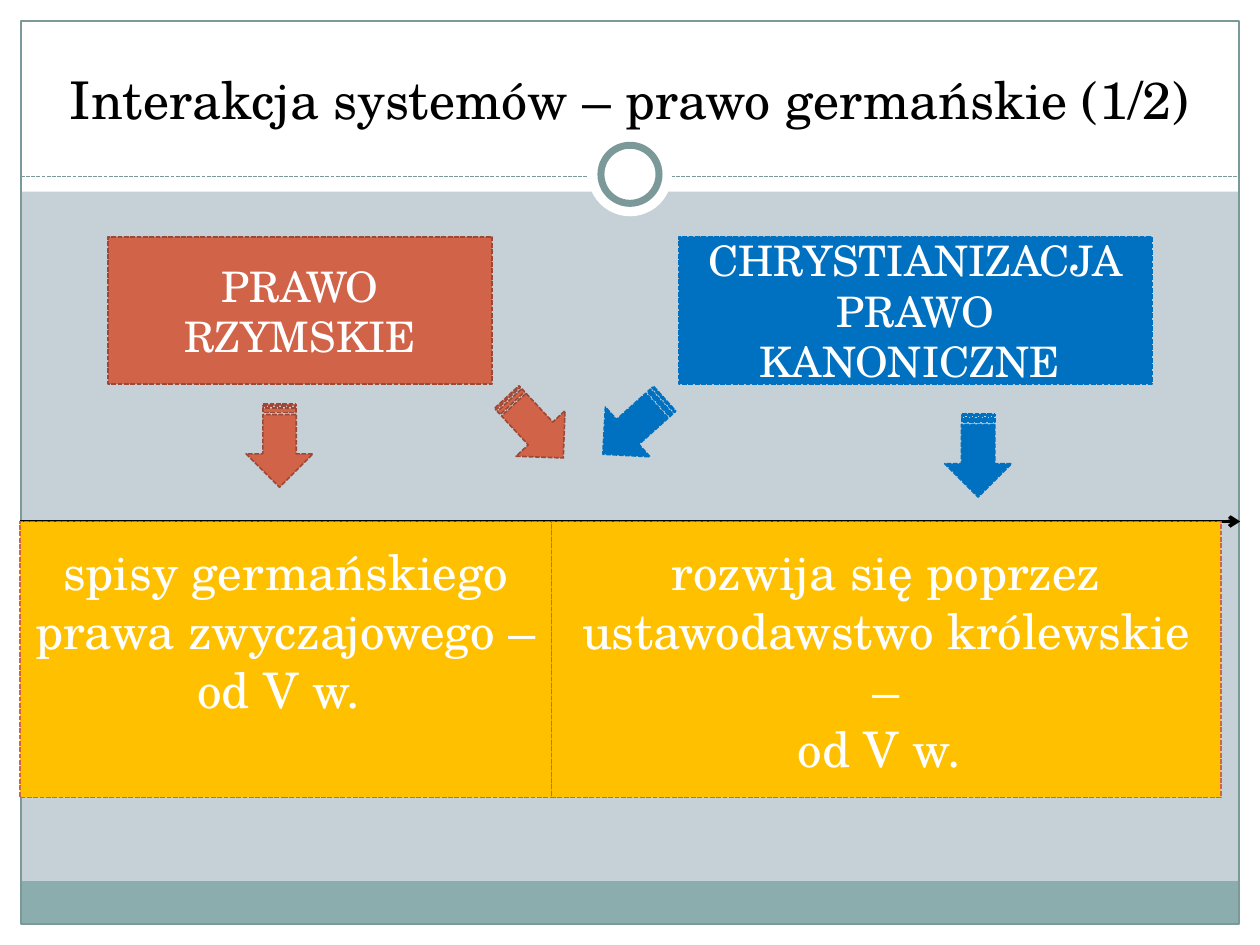
from dataclasses import dataclass
from typing import Optional

from lxml.etree import SubElement
from pptx import Presentation
from pptx.dml.color import RGBColor
from pptx.enum.dml import MSO_LINE
from pptx.enum.shapes import MSO_CONNECTOR, MSO_SHAPE
from pptx.enum.text import MSO_ANCHOR, PP_ALIGN
from pptx.oxml.ns import qn
from pptx.util import Pt


@dataclass(frozen=True)
class Theme:
    font: str = "TeX Gyre Schola"
    white: str = "FFFFFF"
    black: str = "000000"
    back: str = "C5D1D7"
    teal: str = "8CADAE"
    rule: str = "7C999A"
    gold: str = "FFC000"
    red: str = "D16349"
    dark_red: str = "9B4936"
    blue: str = "0070C0"
    title_size: float = 29.7
    law_size: float = 28
    source_size: float = 24
    dash_width: float = 0.9


@dataclass(frozen=True)
class Block:
    x: float
    y: float
    w: float
    h: float
    fill: Optional[str] = None
    line: Optional[str] = None
    width: float = 0.75
    kind: MSO_SHAPE = MSO_SHAPE.RECTANGLE


@dataclass(frozen=True)
class Box:
    x: float
    y: float
    w: float
    h: float
    fill: str
    line: str
    size: float
    text: str
    bottom: float = 3.6


@dataclass(frozen=True)
class Arrow:
    x: float
    y: float
    angle: float
    fill: str
    line: str


T = Theme()
W, H, EDGE = 720, 540, 12
AXIS_Y, SOURCE_Y = 298, 135.3

BLOCKS = [
    Block(0, H - EDGE, W, EDGE, T.white),
    Block(0, 0, W, 109.5, T.white),
    Block(0, 0, EDGE, H, T.white),
    Block(W - EDGE, 0, EDGE, H, T.white),
    Block(EDGE, 503.5, W - 2 * EDGE, 24.5, T.teal),
    Block(EDGE, EDGE, W - 2 * EDGE, H - 2 * EDGE, None, T.rule),
]
RINGS = [
    Block(336, 75.6, 48, 48, T.white, kind=MSO_SHAPE.OVAL),
    Block(343.4, 83, 33.2, 33.2, T.white, T.rule, 4, MSO_SHAPE.OVAL),
]
BOXES = [
    Box(11.3, AXIS_Y, 303.8, 157.7, T.gold, T.red, T.law_size,
        "spisy germańskiego prawa zwyczajowego – od V w. ", 37.2),
    Box(315.1, AXIS_Y, 382.5, 157.7, T.gold, T.red, T.law_size,
        "rozwija się poprzez ustawodawstwo królewskie –\nod V w. "),
    Box(61.7, SOURCE_Y, 219.6, 84.3, T.red, T.dark_red, T.source_size, "PRAWO RZYMSKIE"),
    Box(388, SOURCE_Y, 270.2, 84.3, T.blue, T.blue, T.source_size,
        "CHRYSTIANIZACJA\nPRAWO KANONICZNE "),
]
ARROWS = [
    Arrow(282, 225.2, 47.1, T.red, T.dark_red),
    Arrow(535.2, 241.2, 90, T.blue, T.blue),
    Arrow(136, 235.6, 90, T.red, T.dark_red),
    Arrow(338.4, 224.6, 138.1, T.blue, T.blue),
]


def rgb(color: str) -> RGBColor:
    return RGBColor.from_string(color)


def draw_block(s, b: Block):
    sp = s.shapes.add_shape(b.kind, Pt(b.x), Pt(b.y), Pt(b.w), Pt(b.h))
    sp.shadow.inherit = False
    if b.fill:
        sp.fill.solid()
        sp.fill.fore_color.rgb = rgb(b.fill)
    else:
        sp.fill.background()
    if b.line:
        sp.line.color.rgb = rgb(b.line)
        sp.line.width = Pt(b.width)
    else:
        sp.line.fill.background()
    return sp


def write(tf, text: str, size: float, color: str) -> None:
    tf.text = text
    tf.word_wrap = True
    for p in tf.paragraphs:
        p.alignment = PP_ALIGN.CENTER
        for r in p.runs:
            r.font.name = T.font
            r.font.size = Pt(size)
            r.font.color.rgb = rgb(color)


def draw_box(s, b: Box) -> None:
    sp = draw_block(s, Block(b.x, b.y, b.w, b.h, b.fill, b.line, T.dash_width))
    sp.line.dash_style = MSO_LINE.SQUARE_DOT
    tf = sp.text_frame
    write(tf, b.text, b.size, T.white)
    tf.vertical_anchor = MSO_ANCHOR.MIDDLE
    tf.margin_bottom = Pt(b.bottom)


def draw_arrow(s, a: Arrow) -> None:
    sp = draw_block(s, Block(a.x, a.y, 47.5, 38.2, a.fill, a.line, T.dash_width,
                             MSO_SHAPE.STRIPED_RIGHT_ARROW))
    sp.line.dash_style = MSO_LINE.SQUARE_DOT
    sp.rotation = a.angle


def draw_line(s, x1: float, x2: float, y: float, color: str, width: float):
    cn = s.shapes.add_connector(MSO_CONNECTOR.STRAIGHT, Pt(x1), Pt(y), Pt(x2), Pt(y))
    cn.line.color.rgb = rgb(color)
    cn.line.width = Pt(width)
    SubElement(cn.element.spPr, qn("a:effectLst"))
    return cn


def draw_title(s, text: str) -> None:
    sp = s.shapes.title
    sp.left, sp.top, sp.width, sp.height = Pt(24), Pt(18), Pt(672), Pt(60)
    write(sp.text_frame, text, T.title_size, T.black)
    sp.text_frame.vertical_anchor = MSO_ANCHOR.BOTTOM
    s.shapes.element.append(sp.element)


def main() -> None:
    """Build the slide on Germanic law and its influences."""
    prs = Presentation()
    prs.slide_width, prs.slide_height = Pt(W), Pt(H)
    s = prs.slides.add_slide(prs.slide_layouts[5])
    s.background.fill.solid()
    s.background.fill.fore_color.rgb = rgb(T.back)
    for b in BLOCKS:
        draw_block(s, b)
    rule = draw_line(s, EDGE, W - EDGE, 100.8, T.rule, 0.75)
    rule.line.dash_style = MSO_LINE.SQUARE_DOT
    for b in RINGS:
        draw_block(s, b)
    draw_title(s, "Interakcja systemów – prawo germańskie (1/2)")
    axis = draw_line(s, 11.3, 708.7, AXIS_Y, T.black, 2)
    SubElement(axis.line._get_or_add_ln(), qn("a:tailEnd"), type="arrow")
    for b in BOXES:
        draw_box(s, b)
    for a in ARROWS:
        draw_arrow(s, a)
    prs.save("out.pptx")


if __name__ == "__main__":
    main()
